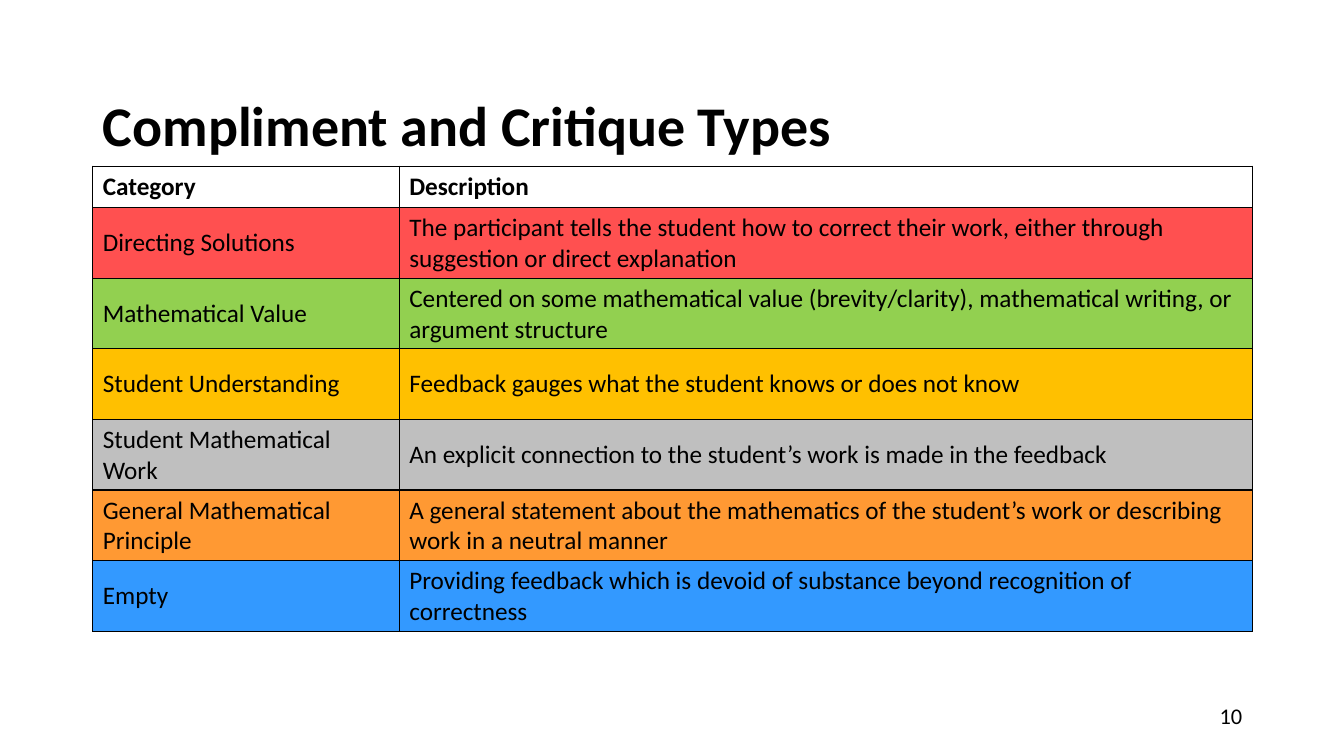
"""Build the slide that defines the compliment and critique types."""
from dataclasses import dataclass

from lxml.etree import SubElement
from pptx import Presentation
from pptx.dml.color import RGBColor
from pptx.enum.text import MSO_ANCHOR, PP_ALIGN
from pptx.oxml.ns import qn
from pptx.util import Pt

HEADING = "Compliment and Critique Types"
PAGE_NUMBER = "10"
HEADER = ("Category", "Description")
FEEDBACK_TYPES = [
    ("Directing Solutions",
     "The participant tells the student how to correct their work, either through suggestion or direct explanation",
     "FF5050"),
    ("Mathematical Value",
     "Centered on some mathematical value (brevity/clarity), mathematical writing, or argument structure",
     "92D050"),
    ("Student Understanding",
     "Feedback gauges what the student knows or does not know",
     "FFC000"),
    ("Student Mathematical Work",
     "An explicit connection to the student’s work is made in the feedback",
     "BFBFBF"),
    ("General Mathematical Principle",
     "A general statement about the mathematics of the student’s work or describing work in a neutral manner",
     "FF9933"),
    ("Empty",
     "Providing feedback which is devoid of substance beyond recognition of correctness",
     "3399FF"),
]


@dataclass(frozen=True)
class Theme:
    font: str = "Calibri"
    ink: str = "000000"
    heading_size: int = 40
    table_size: int = 18
    number_size: int = 16
    border_width: int = 1


THEME = Theme()
EMU_PER_PX = 9144
SLIDE_SIZE = (1333, 750)
HEADING_BOX = (92, 55, 1150, 145)
NUMBER_BOX = (942, 690, 300, 40)
TABLE_LEFT, TABLE_TOP = 92, 165
COLUMN_WIDTHS = (304, 846)
HEADER_HEIGHT, TYPE_HEIGHT = 41, 70


def px(*lengths):
    return [length * EMU_PER_PX for length in lengths]


def write(frame, wording, size, bold=False, align=PP_ALIGN.LEFT):
    frame.text = wording
    paragraph = frame.paragraphs[0]
    paragraph.alignment = align
    font = paragraph.runs[0].font
    font.name, font.size, font.bold = THEME.font, Pt(size), bold
    font.color.rgb = RGBColor.from_string(THEME.ink)
    return paragraph


def add_borders(cell):
    properties = cell._tc.get_or_add_tcPr()
    for position, side in enumerate(("lnL", "lnR", "lnT", "lnB")):
        border = SubElement(properties, qn(f"a:{side}"), w=str(Pt(THEME.border_width)))
        properties.insert(position, border)
        ink = SubElement(border, qn("a:solidFill"))
        SubElement(ink, qn("a:srgbClr"), val=THEME.ink)


def add_heading(slide):
    heading = slide.shapes.title
    heading.left, heading.top, heading.width, heading.height = px(*HEADING_BOX)
    heading.text_frame.vertical_anchor = MSO_ANCHOR.MIDDLE
    write(heading.text_frame, HEADING, THEME.heading_size, bold=True).line_spacing = 0.9


def add_page_number(slide):
    frame = slide.shapes.add_textbox(*px(*NUMBER_BOX)).text_frame
    frame.word_wrap = True
    frame.vertical_anchor = MSO_ANCHOR.MIDDLE
    write(frame, PAGE_NUMBER, THEME.number_size, align=PP_ALIGN.RIGHT)


def add_types_table(slide):
    rows = [(*HEADER, None), *FEEDBACK_TYPES]
    heights = [HEADER_HEIGHT] + [TYPE_HEIGHT] * len(FEEDBACK_TYPES)
    bounds = px(TABLE_LEFT, TABLE_TOP, sum(COLUMN_WIDTHS), sum(heights))
    table = slide.shapes.add_table(len(rows), len(HEADER), *bounds).table
    table.first_row = table.horz_banding = False
    for column, width in zip(table.columns, px(*COLUMN_WIDTHS)):
        column.width = width
    for row, height, (category, description, color) in zip(table.rows, px(*heights), rows):
        row.height = height
        for cell, wording in zip(row.cells, (category, description)):
            write(cell.text_frame, wording, THEME.table_size, bold=color is None)
            if color:
                cell.vertical_anchor = MSO_ANCHOR.MIDDLE
                cell.fill.solid()
                cell.fill.fore_color.rgb = RGBColor.from_string(color)
            else:
                cell.fill.background()
            add_borders(cell)


def main():
    deck = Presentation()
    deck.slide_width, deck.slide_height = px(*SLIDE_SIZE)
    slide = deck.slides.add_slide(deck.slide_layouts.get_by_name("Title Only"))
    add_heading(slide)
    add_page_number(slide)
    add_types_table(slide)
    deck.save("out.pptx")


if __name__ == "__main__":
    main()
